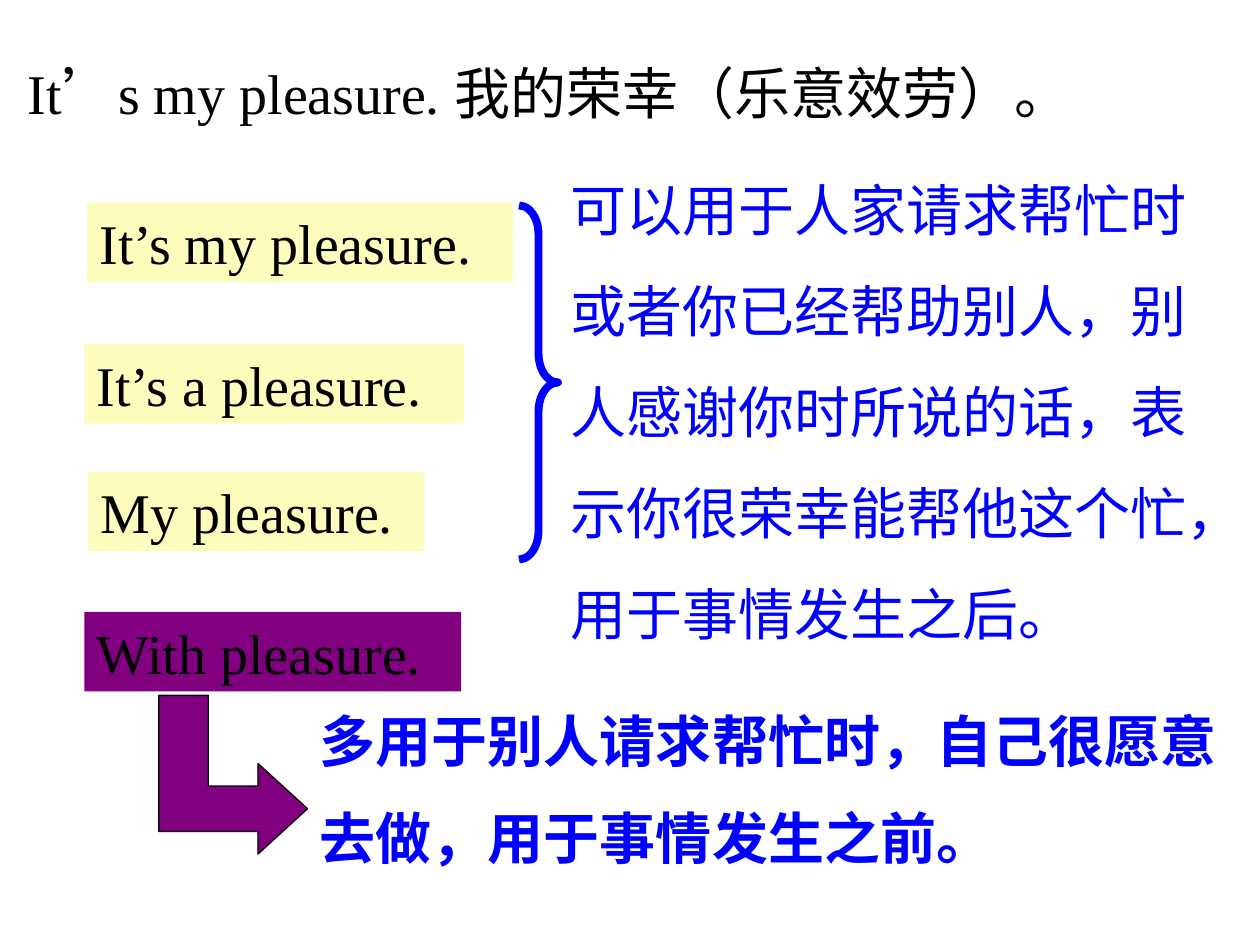
import pptx
import pptx.dml.color
import pptx.enum.shapes
import pptx.enum.text
import pptx.util

Pt = pptx.util.Pt
SHAPES = pptx.enum.shapes.MSO_SHAPE
COLORS = {"ink": "000000", "note": "0000FF", "before_or_after": "FCFCBC", "before": "800080"}


def rgb(name):
    return pptx.dml.color.RGBColor.from_string(COLORS[name])


def write(frame, *lines, color="ink", bold=False, spacing=1.0, before=0, hanging=0):
    """Fill a text frame with one left-aligned paragraph per line."""
    frame.word_wrap = True
    frame.auto_size = pptx.enum.text.MSO_AUTO_SIZE.NONE
    frame.vertical_anchor = pptx.enum.text.MSO_ANCHOR.TOP
    for index, line in enumerate(lines):
        paragraph = frame.add_paragraph() if index else frame.paragraphs[0]
        paragraph.alignment = pptx.enum.text.PP_ALIGN.LEFT
        paragraph.line_spacing = spacing
        paragraph.space_before = Pt(before)
        if hanging:
            properties = paragraph._p.get_or_add_pPr()
            properties.set("marL", str(Pt(hanging)))
            properties.set("indent", str(-Pt(hanging)))
        run = paragraph.add_run()
        run.text = line
        run.font.name = "Times New Roman"
        run.font.size = Pt(32)
        run.font.bold = bold
        run.font.color.rgb = rgb(color)


class PhraseSlide:
    phrase_height = 45.4
    phrase_style = {"color": "ink"}
    note_style = {"color": "note"}

    def __init__(self, presentation):
        self.slide = presentation.slides.add_slide(presentation.slide_layouts[5])
        self.shapes = self.slide.shapes

    def title(self, text, left, top, width, height):
        heading = self.shapes.title
        heading.left, heading.top = Pt(left), Pt(top)
        heading.width, heading.height = Pt(width), Pt(height)
        write(heading.text_frame, text, spacing=1.5, before=9.6, hanging=27)

    def phrase(self, text, left, top, width, fill):
        box = self.shapes.add_shape(
            SHAPES.RECTANGLE, Pt(left), Pt(top), Pt(width), Pt(self.phrase_height))
        box.shadow.inherit = False
        box.fill.solid()
        box.fill.fore_color.rgb = rgb(fill)
        box.line.fill.background()
        write(box.text_frame, text, **self.phrase_style)

    def note(self, lines, left, top, width, height, **style):
        box = self.shapes.add_textbox(Pt(left), Pt(top), Pt(width), Pt(height))
        write(box.text_frame, *lines, **self.note_style, **style)

    def brace(self, left, top, width, height):
        brace = self.shapes.add_shape(
            SHAPES.RIGHT_BRACE, Pt(left), Pt(top), Pt(width), Pt(height))
        brace.shadow.inherit = False
        brace.adjustments[0] = 0.74
        brace.fill.background()
        brace.line.color.rgb = rgb("note")
        brace.line.width = Pt(4.5)

    def bent_arrow(self, left, top, width, height):
        """Arrow that runs down, then right; the bar is half as thick as the head."""
        right, bottom = left + width, top + height
        neck, inner = left + width * 2 / 3, left + width / 3
        half_bar = height / 7
        axis = bottom - 2 * half_bar
        outline = [
            (left, top), (inner, top), (inner, axis - half_bar), (neck, axis - half_bar),
            (neck, axis - 2 * half_bar), (right, axis), (neck, bottom),
            (neck, axis + half_bar), (left, axis + half_bar),
        ]
        corners = [(Pt(x), Pt(y)) for x, y in outline]
        builder = self.shapes.build_freeform(*corners[0])
        builder.add_line_segments(corners[1:], close=True)
        arrow = builder.convert_to_shape()
        arrow.shadow.inherit = False
        arrow.fill.solid()
        arrow.fill.fore_color.rgb = rgb("before")
        arrow.line.color.rgb = rgb("ink")
        arrow.line.width = Pt(0.75)


def main():
    presentation = pptx.Presentation()
    presentation.slide_width, presentation.slide_height = Pt(720), Pt(540)
    page = PhraseSlide(presentation)

    page.title(" It’s my pleasure. 我的荣幸（乐意效劳）。", 0.7, 10.8, 687.6, 64)
    for text, left, top, width in (
        ("It’s my pleasure.", 49.7, 115.9, 243.4),
        ("It’s a pleasure.", 48.2, 196.6, 216.7),
        ("My pleasure.", 50.4, 269.5, 192.2),
    ):
        page.phrase(text, left, top, width, "before_or_after")
    page.brace(296.6, 117.4, 22.3, 202.3)
    page.note(
        ["可以用于人家请求帮忙时或者你已经帮助别人，别人感谢你时所说的话，"
         "表示你很荣幸能帮他这个忙，用于事情发生之后。"],
        319, 77.8, 368.6, 295.2, spacing=1.5)
    page.phrase("With pleasure.", 48.2, 349.7, 215.3, "before")
    page.note(
        ["多用于别人请求帮忙时，自己很愿意", "去做，用于事情发生之前。"],
        175.7, 392.4, 545.8, 110.9, bold=True, spacing=1.2, before=9.6, hanging=28.8)
    page.bent_arrow(90.7, 397.4, 85, 90.7)

    presentation.save("out.pptx")


if __name__ == "__main__":
    main()
